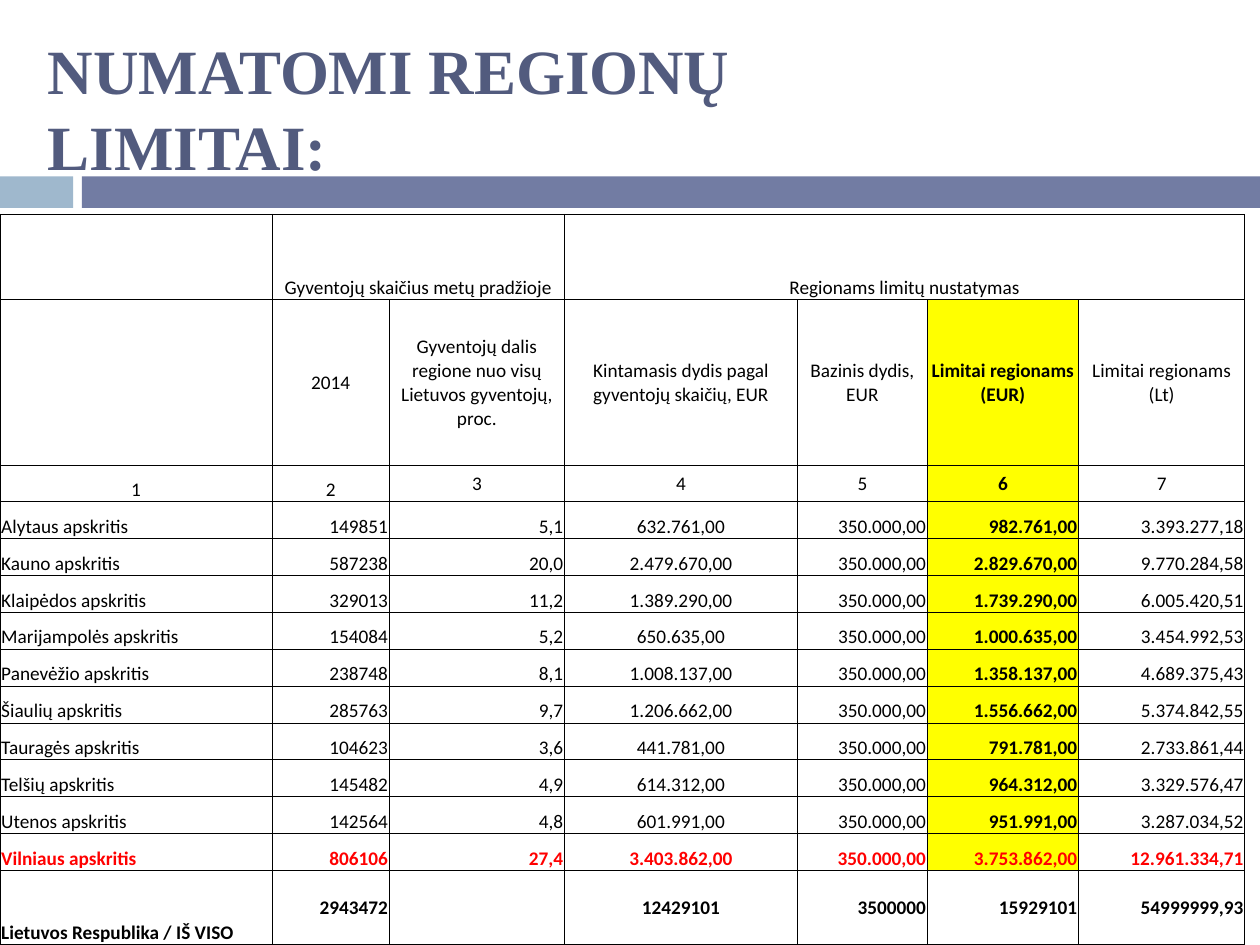
import lxml.etree
import pptx
import pptx.dml.color
import pptx.enum.shapes
import pptx.enum.text
import pptx.oxml.ns
import pptx.util

Inches, Pt = pptx.util.Inches, pptx.util.Pt
RGB = pptx.dml.color.RGBColor.from_string
Align, Anchor = pptx.enum.text.PP_ALIGN, pptx.enum.text.MSO_ANCHOR
qn = pptx.oxml.ns.qn

THEME = {
    "title": {"name": "Times New Roman", "size": Pt(36), "bold": True},
    "cell": {"name": "Calibri", "size": Pt(11)},
    "title_color": "525B7E",
    "accent": "9FB8CD",
    "band": "727CA3",
    "ink": "000000",
    "alert": "FF0000",
    "highlight": "FFFF00",
    "border": Pt(0.5),
}


def style_font(font, formats, color):
    for name, value in formats.items():
        setattr(font, name, value)
    font.color.rgb = RGB(color)


def add_borders(cell):
    """Draw a thin solid line on all four sides of a cell."""
    properties = cell._tc.get_or_add_tcPr()
    for position, side in enumerate(("lnL", "lnR", "lnT", "lnB")):
        line = lxml.etree.Element(qn(f"a:{side}"), w=str(THEME["border"]))
        fill = lxml.etree.SubElement(line, qn("a:solidFill"))
        lxml.etree.SubElement(fill, qn("a:srgbClr"), val=THEME["ink"])
        properties.insert(position, line)


deck = pptx.Presentation()
deck.slide_width, deck.slide_height = Inches(10), Inches(7.5)
page = deck.slides.add_slide(deck.slide_layouts[5])

# Title
title = page.shapes.title
title.left, title.top, title.width, title.height = map(Inches, (0.28, 0.25, 6.54, 1.08))
frame = title.text_frame
frame.text = "NUMATOMI REGIONŲ LIMITAI:"
frame_format = {
    "word_wrap": True,
    "auto_size": pptx.enum.text.MSO_AUTO_SIZE.NONE,
    "vertical_anchor": Anchor.TOP,
    "margin_left": Inches(0.1),
    "margin_right": Inches(0.1),
    "margin_top": 0,
    "margin_bottom": 0,
}
for name, value in frame_format.items():
    setattr(frame, name, value)
frame.paragraphs[0].alignment = Align.LEFT
style_font(frame.paragraphs[0].runs[0].font, THEME["title"], THEME["title_color"])

# Divider under the title
for left, right, color in ((0, 0.58, "accent"), (0.65, 10, "band")):
    bar = page.shapes.add_shape(
        pptx.enum.shapes.MSO_SHAPE.RECTANGLE,
        Inches(left), Inches(1.4), Inches(right - left), Inches(0.25),
    )
    bar.shadow.inherit = False
    bar.fill.solid()
    bar.fill.fore_color.rgb = RGB(THEME[color])
    bar.line.fill.background()

# Table of regional limits
BASE = "350.000,00"
counties = [
    ("Alytaus", "149851", "5,1", "632.761,00", "982.761,00", "3.393.277,18"),
    ("Kauno", "587238", "20,0", "2.479.670,00", "2.829.670,00", "9.770.284,58"),
    ("Klaipėdos", "329013", "11,2", "1.389.290,00", "1.739.290,00", "6.005.420,51"),
    ("Marijampolės", "154084", "5,2", "650.635,00", "1.000.635,00", "3.454.992,53"),
    ("Panevėžio", "238748", "8,1", "1.008.137,00", "1.358.137,00", "4.689.375,43"),
    ("Šiaulių", "285763", "9,7", "1.206.662,00", "1.556.662,00", "5.374.842,55"),
    ("Tauragės", "104623", "3,6", "441.781,00", "791.781,00", "2.733.861,44"),
    ("Telšių", "145482", "4,9", "614.312,00", "964.312,00", "3.329.576,47"),
    ("Utenos", "142564", "4,8", "601.991,00", "951.991,00", "3.287.034,52"),
    ("Vilniaus", "806106", "27,4", "3.403.862,00", "3.753.862,00", "12.961.334,71"),
]
rows = [
    ("", "Gyventojų skaičius metų pradžioje", "", "Regionams limitų nustatymas", "", "", ""),
    ("", "2014", "Gyventojų dalis regione nuo visų Lietuvos gyventojų, proc.",
     "Kintamasis dydis pagal gyventojų skaičių, EUR", "Bazinis dydis, EUR",
     "Limitai regionams (EUR)", "Limitai regionams (Lt)"),
    tuple("1234567"),
    *((f"{county} apskritis", *shares, BASE, *limits)
      for county, *shares, limits in ((*row[:4], row[4:]) for row in counties)),
    ("Lietuvos Respublika / IŠ VISO", "2943472", "", "12429101", "3500000",
     "15929101", "54999999,93"),
]
column_widths = [2.16, 0.93, 1.39, 1.85, 1.03, 1.2, 1.32]
top, height = 1.7, 5.8
group_height, heading_height, total_height = 0.68, 1.31, 0.59
body_rows = len(rows) - 3
body_height = (height - group_height - heading_height - total_height) / body_rows
row_heights = [group_height, heading_height, *[body_height] * body_rows, total_height]
total_row = len(rows) - 1
vilnius_row = total_row - 1
limit_column = 5

table = page.shapes.add_table(
    len(rows), len(column_widths), 0, Inches(top), Inches(sum(column_widths)), Inches(height)
).table
table.first_row = table.horz_banding = False
for column, width in zip(table.columns, column_widths):
    column.width = Inches(width)
for row, row_height in zip(table.rows, row_heights):
    row.height = Inches(row_height)
table.cell(0, 1).merge(table.cell(0, 2))
table.cell(0, 3).merge(table.cell(0, 6))

for r, texts in enumerate(rows):
    for c, text in enumerate(texts):
        cell = table.cell(r, c)
        if c == limit_column and 0 < r < total_row:
            cell.fill.solid()
            cell.fill.fore_color.rgb = RGB(THEME["highlight"])
        else:
            cell.fill.background()
        add_borders(cell)
        if not text:
            continue
        centered_row = r == 1 or (r == 2 and c > 1) or (r == total_row and c > 0)
        cell_format = {
            "vertical_anchor": Anchor.MIDDLE if centered_row else Anchor.BOTTOM,
            "margin_left": Inches(0.01),
            "margin_right": Inches(0.01),
            "margin_top": Inches(0.01),
            "margin_bottom": 0,
            "text": text,
        }
        for name, value in cell_format.items():
            setattr(cell, name, value)
        para = cell.text_frame.paragraphs[0]
        if r < 3 or c == 3:
            para.alignment = Align.CENTER
        else:
            para.alignment = Align.RIGHT if c else Align.LEFT
        font = para.runs[0].font
        style_font(font, THEME["cell"], THEME["alert" if r == vilnius_row else "ink"])
        font.bold = r >= vilnius_row or c == limit_column

deck.save("out.pptx")
